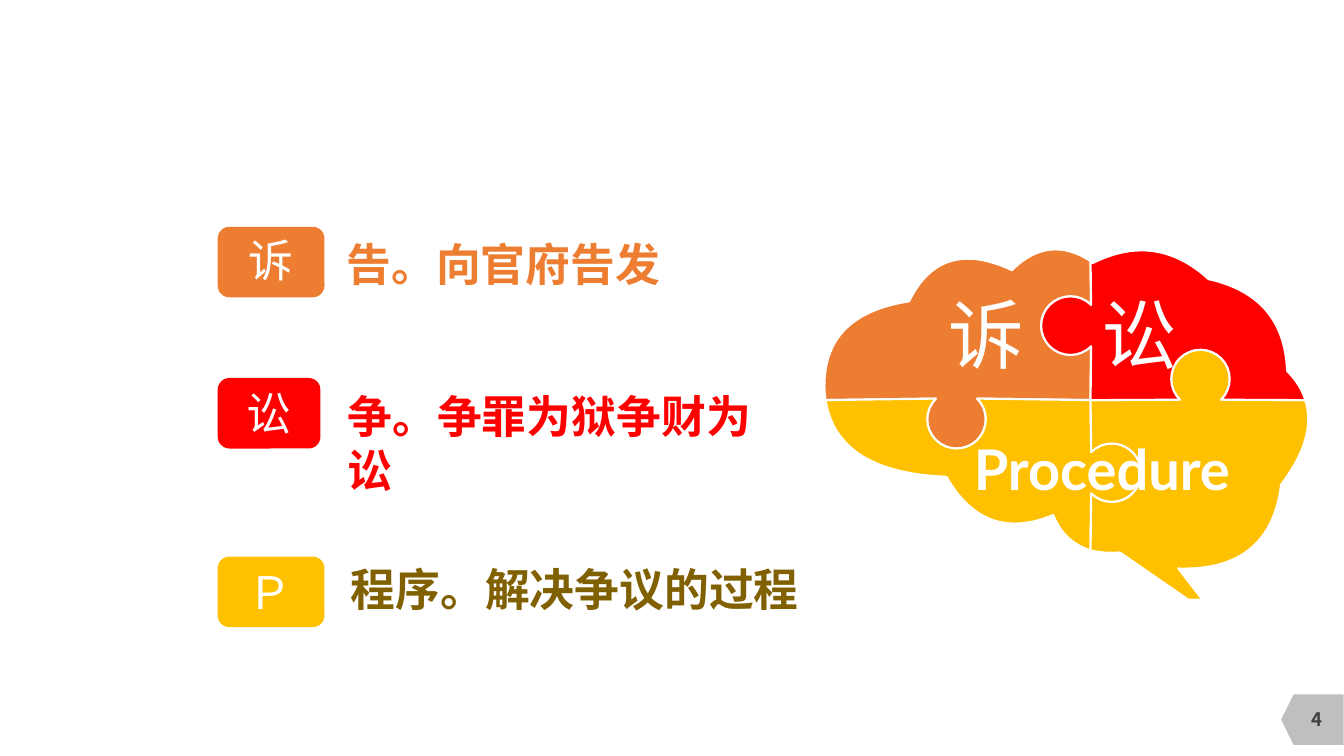
import math
from lxml import etree
from pptx import Presentation
from pptx.dml.color import RGBColor
from pptx.enum import shapes, text
from pptx.oxml import ns
from pptx.util import Pt

CJK, LATO, NUM = "Noto Sans CJK JP", "Lato", "Noto Sans CJK SC"
ORANGE, RED, GOLD, WHITE = "ED7D31", "FF0000", "FFC000", "FFFFFF"

ROWS = [
    ("诉", ORANGE, (155.5, 162, 76.3, 50.4), (167.8, 162.9, 51.1, 46),
     "告。向官府告发", ORANGE, (240.5, 165.6, 382, 46)),
    ("讼", RED, (155.5, 270, 73.4, 50.4), (167, 272.2, 49.7, 46),
     "争。争罪为狱争财为讼", RED, (241.2, 274.3, 334.5, 85)),
    ("Ｐ", GOLD, (155.5, 397.6, 76.3, 50.4), (167, 399.6, 51.1, 46),
     "程序。解决争议的过程", "806000", (243.4, 397.4, 355, 46)),
]
LABELS = [
    ("诉", 54, CJK, False, (669.9, 201.9, 69.1, 72.7)),
    ("讼", 54, CJK, False, (779.5, 201.9, 69.1, 72.7)),
    ("Procedure", 40, LATO, True, (688, 306.7, 198, 55.4)),
]

MID_X, MID_Y, RADIUS = 779, 285.8, 20.9
TOP, BASE = (MID_X, 186.5), (MID_X, 393.1)
CORE, LEFT, RIGHT = (MID_X, MID_Y), (589.7, MID_Y), (932.4, MID_Y)
UPPER, WEST = (764.6, 232.6, 0), (683.3, 299.5, 270)
LOWER, EAST = (794.2, 337.7, 180), (857.5, 270.7, 90)


def knob(place, way=1):
    x, y, mouth = place
    turn = way * math.pi / 4
    pull = 4 / 3 * math.tan(turn / 4)

    def spot(angle, bend=0):
        cos, sin = math.cos(angle), math.sin(angle)
        return (x + RADIUS * (cos - bend * sin), y + RADIUS * (sin + bend * cos))

    begin = math.radians(mouth) + turn
    steps = [spot(begin)]
    for i in range(6):
        a, b = begin + i * turn, begin + (i + 1) * turn
        steps.append(spot(a, pull) + spot(b, -pull) + spot(b))
    return steps


PIECES = [
    (ORANGE, [
        LEFT,
        (589.7, 283.7, 589, 281.5, 589, 279.4),
        (587.5, 242.6, 607.7, 221.8, 649.4, 215.3),
        (664.6, 184.3, 689, 177.1, 722.9, 193),
        (740.2, 175.7, 758.9, 173.5, *TOP),
        *knob(UPPER, -1), CORE, *knob(WEST)]),
    (GOLD, [
        CORE, *knob(LOWER), BASE,
        (766.8, 389.5, 757.4, 380.9, 752.4, 367.9),
        (719.3, 381.6, 694.1, 372.2, 676.1, 340.6),
        (623.5, 338.4, 595.4, 320.4, *LEFT),
        *knob(WEST, -1)]),
    (GOLD, [
        BASE, *knob(LOWER, -1), CORE, *knob(EAST), RIGHT,
        (938.2, 304.6, 931.7, 324, 915.1, 346.3),
        (910.1, 386.6, 886.3, 407.5, 841.7, 406.1),
        (859, 428.4), (848.9, 428.4), (799.9, 394.6),
        (792, 395.3, 784.8, 394.6, *BASE)]),
    (RED, [
        CORE, *knob(UPPER), TOP, (780.5, 187.9),
        (810.7, 172.8, 838.1, 176.4, 863.3, 199.4),
        (899.3, 207.4, 918, 229, 919.4, 265),
        (925.9, 271.4, 930.2, 278.6, *RIGHT),
        *knob(EAST, -1)]),
]


def color(code):
    return RGBColor.from_string(code)


def bounds(steps):
    dots = [steps[0]]
    for step in steps[1:]:
        ends = [dots[-1], step[:2], step[2:4], step[4:]]
        if len(step) == 6:
            for t in (i / 20 for i in range(1, 20)):
                mix = ((1 - t) ** 3, 3 * t * (1 - t) ** 2, 3 * t * t * (1 - t), t ** 3)
                dots.append(tuple(sum(m * e[k] for m, e in zip(mix, ends))
                                  for k in (0, 1)))
        dots.append(step[-2:])
    xs, ys = zip(*dots)
    return min(xs), min(ys), max(xs), max(ys)


def outline(home, steps):
    x, y, right, bottom = bounds(steps)
    form = home.build_freeform(x, y, scale=Pt(0.01) * 100)
    form = home.build_freeform(round(x * 100), round(y * 100), scale=Pt(0.01))
    corners = [(right, y), (right, bottom), (x, bottom)]
    form.add_line_segments([(round(a * 100), round(b * 100)) for a, b in corners])
    shape = form.convert_to_shape()
    track = shape._element.find(".//" + ns.qn("a:path"))
    for part in list(track):
        track.remove(part)
    for i, step in enumerate(steps):
        kind = "moveTo" if i == 0 else "lnTo" if len(step) == 2 else "cubicBezTo"
        part = etree.SubElement(track, ns.qn("a:" + kind))
        for a, b in zip(step[::2], step[1::2]):
            dot = etree.SubElement(part, ns.qn("a:pt"))
            dot.set("x", str(round((a - x) * 100)))
            dot.set("y", str(round((b - y) * 100)))
    etree.SubElement(track, ns.qn("a:close"))
    return shape


def paint(shape, fill, line=None):
    shape.shadow.inherit = False
    shape.fill.solid()
    shape.fill.fore_color.rgb = color(fill)
    if line:
        shape.line.color.rgb = color(line)
        shape.line.width = Pt(1.5)
    else:
        shape.line.fill.background()
    return shape


def block(home, kind, box, fill):
    return paint(home.add_shape(kind, *map(Pt, box)), fill)


def write(home, words, box, size, face, tint, bold=False, center=True, wrap=True):
    frame = home.add_textbox(*map(Pt, box)).text_frame
    frame.word_wrap = wrap
    para = frame.paragraphs[0]
    para.alignment = text.PP_ALIGN.CENTER if center else text.PP_ALIGN.LEFT
    run = para.add_run()
    run.text = words
    font = run.font
    font.size, font.bold, font.name = Pt(size), bold, face
    font.color.rgb = color(tint)
    glyphs = etree.SubElement(run._r.get_or_add_rPr(), ns.qn("a:ea"))
    glyphs.set("typeface", face)
    return frame


def main():
    deck = Presentation()
    deck.slide_width, deck.slide_height = Pt(960), Pt(540)
    slide = deck.slides.add_slide(deck.slide_layouts[6])
    home = slide.shapes

    tag = block(home, shapes.MSO_SHAPE.FLOWCHART_OFFPAGE_CONNECTOR,
                (919.4, 491.8, 36, 44.6), "BFBFBF")
    tag.rotation = 90

    for fill, steps in PIECES:
        paint(outline(home, steps), fill, WHITE)

    page = write(home, "4", (916.6, 499, 48.2, 28.8), 13.3, NUM, "404040", True)
    page.vertical_anchor = text.MSO_ANCHOR.MIDDLE

    for words, size, face, bold, box in LABELS:
        write(home, words, box, size, face, WHITE, bold, wrap=False)

    for sign, fill, card, spot, words, tint, box in ROWS:
        group = home.add_group_shape().shapes
        block(group, shapes.MSO_SHAPE.ROUNDED_RECTANGLE, card, fill)
        write(group, sign, spot, 32, CJK, WHITE)
        write(group, words, box, 32, CJK, tint, True, False)

    deck.save("out.pptx")


if __name__ == "__main__":
    main()
